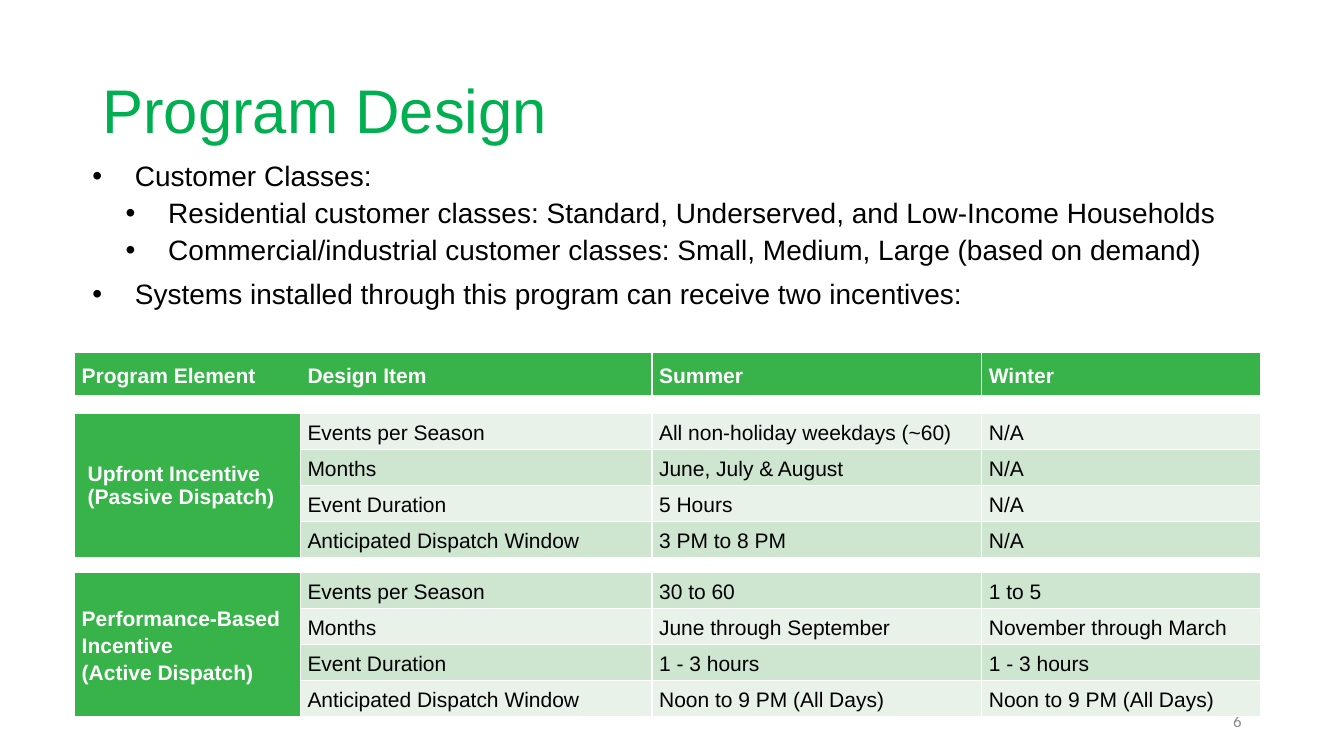
from lxml.etree import SubElement
from pptx import Presentation
from pptx.dml.color import RGBColor
from pptx.enum.text import MSO_ANCHOR as Anchor, PP_ALIGN as Align
from pptx.oxml import parse_xml
from pptx.oxml.ns import nsdecls, qn
from pptx.util import Cm, Pt

WHITE, BLACK, GREEN = "FFFFFF", "000000", "37B34A"
STRIPES = ["E8F2E9", "CEE5D0"]
COLUMN_WIDTHS = [5.69, 8.86, 8.31, 7.04]
ROW_HEIGHTS = [1.07, 0.46] + [0.91] * 4 + [0.36] + [0.91] * 4
HEADINGS = ["Program Element", "Design Item", "Summer", "Winter"]
UPFRONT = [
    ["Events per Season", "All non-holiday weekdays (~60)", "N/A"],
    ["Months", "June, July & August", "N/A"],
    ["Event Duration", "5 Hours", "N/A"],
    ["Anticipated Dispatch Window", "3 PM to 8 PM", "N/A"],
]
PERFORMANCE = [
    ["Events per Season", "30 to 60", "1 to 5"],
    ["Months", "June through September", "November through March"],
    ["Event Duration", "1 - 3 hours", "1 - 3 hours"],
    ["Anticipated Dispatch Window", "Noon to 9 PM (All Days)", "Noon to 9 PM (All Days)"],
]
BULLETS = [
    (0, "Customer Classes:"),
    (1, "Residential customer classes: Standard, Underserved, and Low-Income Households"),
    (1, "Commercial/industrial customer classes: Small, Medium, Large (based on demand)"),
    (0, "Systems installed through this program can receive two incentives:"),
]


def rgb(code):
    return RGBColor.from_string(code)


def add_run(paragraph, text, size, color, bold=False, font="Arial"):
    run = paragraph.add_run()
    run.text = text
    run.font.name, run.font.size, run.font.bold = font, Pt(size), bold
    run.font.color.rgb = rgb(color)


def next_paragraph(frame, index):
    return frame.add_paragraph() if index else frame.paragraphs[0]


def add_text_frame(slide, left, top, width, height, anchor=Anchor.MIDDLE):
    frame = slide.shapes.add_textbox(Cm(left), Cm(top), Cm(width), Cm(height)).text_frame
    frame.word_wrap = True
    frame.vertical_anchor = anchor
    return frame


def add_bullets(slide):
    frame = add_text_frame(slide, 2.08, 3.96, 30.48, 5.56, Anchor.TOP)
    for index, (level, text) in enumerate(BULLETS):
        paragraph = next_paragraph(frame, index)
        paragraph.level = level
        paragraph.line_spacing = 0.9
        paragraph.space_before = Pt(5 if level else 10)
        properties = paragraph._p.get_or_add_pPr()
        properties.set("marL", str(Cm(1.07 + 0.84 * level)))
        properties.set("indent", str(-Cm(1.07)))
        SubElement(properties, qn("a:buFont")).set("typeface", "Arial")
        SubElement(properties, qn("a:buChar")).set("char", "•")
        add_run(paragraph, text, 20, BLACK)


def set_borders(cell, hidden=""):
    properties = cell._tc.get_or_add_tcPr()
    for index, edge in enumerate("LRTB"):
        paint = "<a:noFill/>" if edge in hidden else f'<a:solidFill><a:srgbClr val="{WHITE}"/></a:solidFill>'
        border = parse_xml(f'<a:ln{edge} {nsdecls("a")} w="{Pt(1)}">{paint}</a:ln{edge}>')
        properties.insert(index, border)


def fill_cell(cell, lines, fill, color=BLACK, bold=False, align=Align.LEFT,
              spacing=1.15, side=0.18, edge=0, hidden=""):
    cell.fill.solid()
    cell.fill.fore_color.rgb = rgb(fill)
    cell.vertical_anchor = Anchor.MIDDLE
    cell.margin_left = cell.margin_right = Cm(side)
    cell.margin_top = cell.margin_bottom = Cm(edge)
    for index, line in enumerate(lines):
        paragraph = next_paragraph(cell.text_frame, index)
        paragraph.alignment, paragraph.line_spacing = align, spacing
        add_run(paragraph, line, 15, color, bold)
    set_borders(cell, hidden)


def add_spacer(table, row):
    for column in range(len(COLUMN_WIDTHS)):
        cell = table.cell(row, column)
        fill_cell(cell, [], WHITE)
        SubElement(cell.text_frame.paragraphs[0]._p, qn("a:endParaRPr")).set("sz", "100")
    table.cell(row, 0).merge(table.cell(row, len(COLUMN_WIDTHS) - 1))


def add_incentive(table, first_row, name_lines, items, stripes, **name_style):
    for offset, item in enumerate(items):
        row = first_row + offset
        fill_cell(table.cell(row, 0), [] if offset else name_lines, GREEN, WHITE, True, **name_style)
        for column, text in enumerate(item, 1):
            align = Align.JUSTIFY if column == 1 else Align.LEFT
            fill_cell(table.cell(row, column), [text], stripes[offset % 2], align=align)
    table.cell(first_row, 0).merge(table.cell(first_row + len(items) - 1, 0))


def add_program_table(slide):
    table = slide.shapes.add_table(
        len(ROW_HEIGHTS), len(COLUMN_WIDTHS), Cm(1.88), Cm(8.89),
        Cm(sum(COLUMN_WIDTHS)), Cm(sum(ROW_HEIGHTS))).table
    for column, width in zip(table.columns, COLUMN_WIDTHS):
        column.width = Cm(width)
    for row, height in zip(table.rows, ROW_HEIGHTS):
        row.height = Cm(height)
    for column, (heading, hidden) in enumerate(zip(HEADINGS, ["R", "L", "", ""])):
        fill_cell(table.cell(0, column), [heading], GREEN, WHITE, True, Align.JUSTIFY, hidden=hidden)
    add_spacer(table, 1)
    add_incentive(table, 2, ["Upfront Incentive", "(Passive Dispatch)"], UPFRONT, STRIPES,
                  spacing=1.0, side=0.33, edge=0.18)
    add_spacer(table, 6)
    add_incentive(table, 7, ["Performance-Based Incentive", "(Active Dispatch)"], PERFORMANCE,
                  STRIPES[::-1], align=Align.JUSTIFY)


def main():
    deck = Presentation()
    deck.slide_width, deck.slide_height = Cm(33.87), Cm(19.05)
    slide = deck.slides.add_slide(deck.slide_layouts[6])

    title = add_text_frame(slide, 2.33, 1.01, 29.21, 3.68).paragraphs[0]
    title.line_spacing = 0.9
    add_run(title, "Program Design", 44, "00B050")
    add_bullets(slide)
    page_number = add_text_frame(slide, 23.92, 17.66, 7.62, 1.01).paragraphs[0]
    page_number.alignment = Align.RIGHT
    add_run(page_number, "6", 12, "8C8C8C", font="Calibri")
    add_program_table(slide)

    deck.save("out.pptx")


if __name__ == "__main__":
    main()
